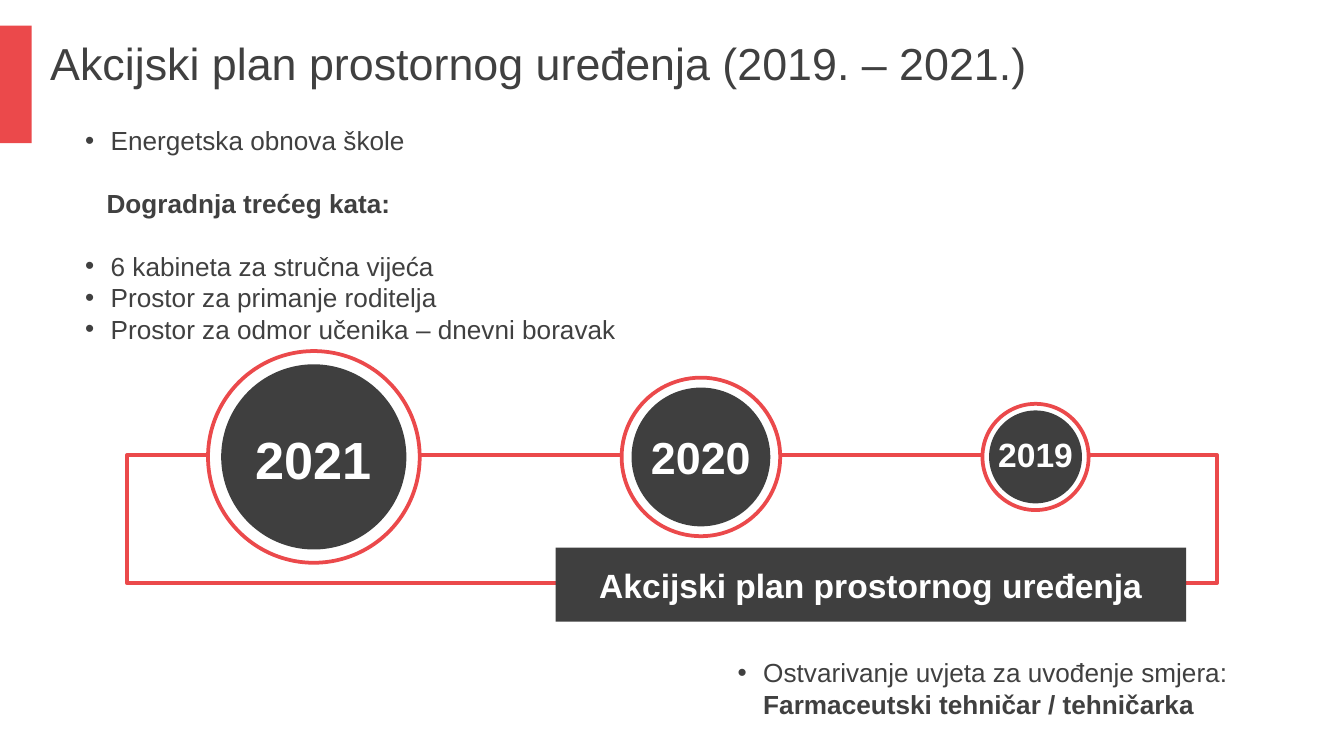
from pptx import Presentation
from pptx.dml.color import RGBColor as RGB
from pptx.enum.shapes import MSO_SHAPE as Form
from pptx.enum.text import MSO_ANCHOR as Anchor, PP_ALIGN as Align
from pptx.oxml.ns import qn
from pptx.util import Inches, Pt
from lxml.etree import SubElement as Sub

RED = RGB(0xEB, 0x49, 0x4B)
DARK = RGB(0x3F, 0x3F, 0x3F)
INK = RGB(0x40, 0x40, 0x40)
WHITE = RGB(0xFF, 0xFF, 0xFF)

# Square grid cells: 100 columns by 56.25 rows fill the slide
CELL = Inches(0.1)
COLS, ROWS = 100, 56.25
LEAD = Pt(16.8)


def cells(*box):
    return [round(n * CELL) for n in box]


def draw(slide, form, box, fill=None, line=None):
    shape = slide.shapes.add_shape(form, *cells(*box))
    shape.shadow.inherit = False
    if fill is None:
        shape.fill.background()
    else:
        shape.fill.solid()
        shape.fill.fore_color.rgb = fill
    if line is None:
        shape.line.fill.background()
    else:
        shape.line.color.rgb = line
        shape.line.width = Pt(2)
    return shape


def frame(slide, box):
    body = slide.shapes.add_textbox(*cells(*box)).text_frame
    body.word_wrap = True
    body.vertical_anchor = Anchor.MIDDLE
    return body


def write(para, text, size, color=INK, bold=False):
    run = para.add_run()
    run.text = text
    run.font.color.rgb = color
    style = {"name": "Arial", "size": Pt(size), "bold": bold}
    for key, value in style.items():
        setattr(run.font, key, value)


def label(slide, box, text, size):
    para = frame(slide, box).paragraphs[0]
    para.alignment = Align.CENTER
    write(para, text, size, WHITE, True)


def title(slide, box, text):
    x, y, w, h = box
    draw(slide, Form.RECTANGLE, (x, y + 0.4, 2.35, 8.75), RED)
    write(frame(slide, (x + 2.75, y, w - 2.75, h)).paragraphs[0], text, 24)


def notes(slide, box, items):
    """Each item is (kind, runs); each run is (text, bold)."""
    body = frame(slide, box)
    for i, (kind, runs) in enumerate(items):
        para = body.paragraphs[0] if i == 0 else body.add_paragraph()
        para.line_spacing = LEAD
        props = para._p.get_or_add_pPr()
        if kind == "head":
            para.space_before = para.space_after = LEAD
            props.set("marL", str(Inches(0.16)))
        else:
            props.set("marL", str(Inches(0.19)))
            props.set("indent", str(-Inches(0.19)))
            Sub(props, qn("a:buFont"), typeface="Arial")
            Sub(props, qn("a:buChar"), char="•")
        for text, bold in runs:
            write(para, text, 14, bold=bold)


def badge(slide, x, y, size, year, points, lift):
    # Red ring and dark disc share one centre; the year is lifted a little
    def around(w, h, rise=0):
        return x - w / 2, y - h / 2 - rise, w, h

    disc = size * 0.875
    draw(slide, Form.OVAL, around(size, size), WHITE, RED)
    draw(slide, Form.OVAL, around(disc, disc), DARK)
    label(slide, around(size * 0.8 if size > 8 else size, points * 0.2, lift),
          year, points)


def plan(slide, box, years, name):
    x, y, w, h = box
    top = y + 7.75
    # Loop and name plate
    draw(slide, Form.RECTANGLE, (x, top, w, 9.55), line=RED)
    plate = (x + 31.9, y + h - 5.5, 46.9, 5.5)
    draw(slide, Form.RECTANGLE, plate, DARK)
    # Years along the top edge
    for shift, size, year, points, lift in years:
        badge(slide, x + shift, top + 0.15, size, year, points, lift)
    px, py, pw, ph = plate
    label(slide, (px + 1.75, py + 0.75, pw - 3.5, 4), name, 18)


def main():
    deck = Presentation()
    deck.slide_width, deck.slide_height = cells(COLS, ROWS)
    slide = deck.slides.add_slide(deck.slide_layouts[6])

    title(slide, (0, 1.5, 90.55, 6.3),
          "Akcijski plan prostornog uređenja (2019. – 2021.)")
    notes(slide, (5.35, 8.7, 84.1, 17.5), [
        ("item", [("Energetska obnova škole", False)]),
        ("head", [("Dogradnja trećeg kata:", True)]),
        ("item", [("6 kabineta za stručna vijeća", False)]),
        ("item", [("Prostor za primanje roditelja", False)]),
        ("item", [("Prostor za odmor učenika – dnevni boravak", False)]),
    ])
    plan(slide, (9.45, 26.1, 81.1, 20.15), [
        (13.9, 15.75, "2021", 28, -0.1),
        (42.7, 11.8, "2020", 24, 0),
        (67.6, 7.9, "2019", 18, 0.2),
    ], "Akcijski plan prostornog uređenja")
    notes(slide, (53.9, 48.35, 40.9, 5.7), [
        ("item", [("Ostvarivanje uvjeta za uvođenje smjera: ", False),
                  ("Farmaceutski tehničar / tehničarka", True)]),
    ])
    deck.save("out.pptx")


if __name__ == "__main__":
    main()
